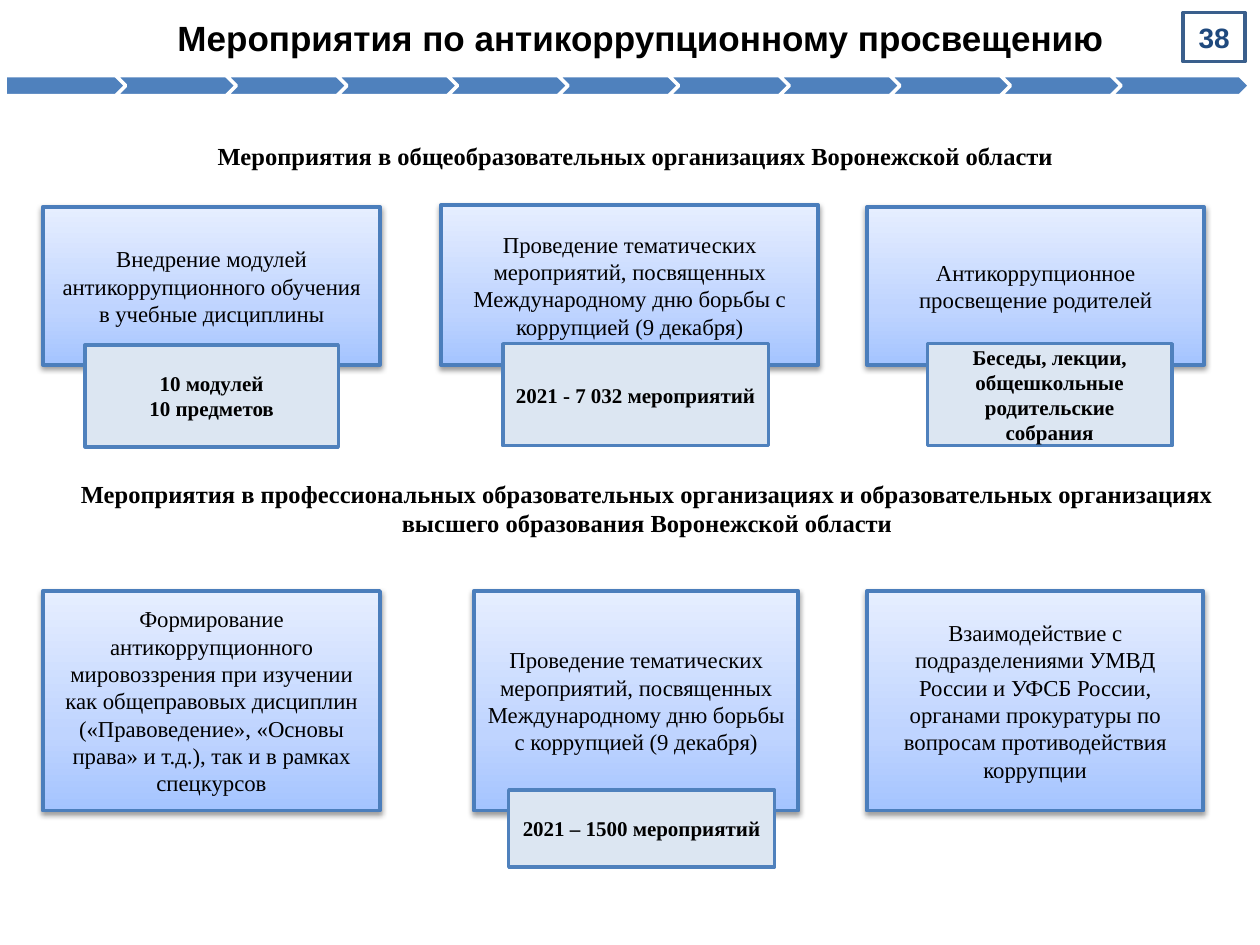
from lxml.etree import SubElement
from pptx import Presentation
from pptx.dml.color import RGBColor
from pptx.enum.shapes import MSO_SHAPE
from pptx.enum.text import MSO_ANCHOR, MSO_AUTO_SIZE, PP_ALIGN
from pptx.oxml.ns import qn
from pptx.util import Pt

BLACK = RGBColor(0x00, 0x00, 0x00)
WHITE = RGBColor(0xFF, 0xFF, 0xFF)
NAVY = RGBColor(0x1F, 0x49, 0x7D)
NUMBER_LINE = RGBColor(0x3A, 0x5F, 0x8C)
BLUE = RGBColor(0x4F, 0x81, 0xBD)
CARD_LINE = RGBColor(0x4B, 0x7E, 0xBC)
PALE_BLUE = RGBColor(0xDC, 0xE6, 0xF2)
CARD_STOPS = [
    (0, RGBColor(0xA4, 0xC4, 0xFF)),
    (35, RGBColor(0xBF, 0xD4, 0xFF)),
    (100, RGBColor(0xE6, 0xEE, 0xFF)),
]

SANS = "Arial"
SERIF = "Times New Roman"

THEMED_EVENTS = ("Проведение тематических мероприятий, посвященных "
                 "Международному дню борьбы с коррупцией (9 декабря)")

# Each entry: left, top, width, height in points, then the text
HEADINGS = [
    (17.3, 77, 692, 24.5,
     "Мероприятия в общеобразовательных организациях Воронежской области"),
    (23.8, 270, 692, 41,
     "Мероприятия в профессиональных образовательных организациях и "
     "образовательных организациях высшего образования Воронежской области"),
]
CARDS = [
    (24.5, 118.3, 192.6, 90.2,
     "Внедрение модулей антикоррупционного обучения в учебные дисциплины"),
    (252, 117.2, 215.5, 91.4, THEMED_EVENTS),
    (495.4, 118.3, 192.6, 90.2, "Антикоррупционное просвещение родителей"),
    (24.5, 337.8, 192.6, 125.4,
     "Формирование антикоррупционного мировоззрения при изучении как "
     "общеправовых дисциплин («Правоведение», «Основы права» и т.д.), "
     "так и в рамках спецкурсов"),
    (270.7, 337.8, 185.5, 125.4, THEMED_EVENTS),
    (495.4, 337.8, 192.2, 125.4,
     "Взаимодействие с подразделениями УМВД России и УФСБ России, органами "
     "прокуратуры по вопросам противодействия коррупции"),
]
BADGES = [
    (48.6, 197, 144.7, 58.3, "10 модулей\n10 предметов"),
    (287.3, 196.4, 151.9, 58.3, "2021 - 7 032 мероприятий"),
    (530, 196.4, 139.7, 58.3,
     "Беседы, лекции, общешкольные родительские собрания"),
    (290.7, 451.5, 151.9, 43.9, "2021 – 1500 мероприятий"),
]


def write_text(sp, text, font, size, color=BLACK, bold=False,
               anchor=MSO_ANCHOR.MIDDLE, wrap=True):
    """Fill a shape with centred text, one paragraph per line."""
    tf = sp.text_frame
    tf.word_wrap = wrap
    tf.auto_size = MSO_AUTO_SIZE.NONE
    tf.vertical_anchor = anchor
    for i, line in enumerate(text.split("\n")):
        p = tf.add_paragraph() if i else tf.paragraphs[0]
        p.alignment = PP_ALIGN.CENTER
        r = p.add_run()
        r.text = line
        r.font.name = font
        r.font.size = Pt(size)
        r.font.bold = bold
        r.font.color.rgb = color


def add_box(shapes, kind, x, y, w, h, fill, line, line_width):
    sp = shapes.add_shape(kind, Pt(x), Pt(y), Pt(w), Pt(h))
    sp.shadow.inherit = False
    if fill is None:
        sp.fill.background()
    else:
        sp.fill.solid()
        sp.fill.fore_color.rgb = fill
    sp.line.color.rgb = line
    sp.line.width = Pt(line_width)
    return sp


def apply_gradient(sp, stops):
    """Run the colour stops from the bottom of the shape to its top."""
    sp.fill.gradient()
    sp.fill.gradient_angle = 90
    gs_list = sp._element.spPr.find(qn("a:gradFill")).find(qn("a:gsLst"))
    for gs in list(gs_list):
        gs_list.remove(gs)
    for pos, color in stops:
        gs = SubElement(gs_list, qn("a:gs"), pos=str(pos * 1000))
        SubElement(gs, qn("a:srgbClr"), val=str(color))


def apply_soft_shadow(sp):
    effects = sp._element.spPr.find(qn("a:effectLst"))
    shadow = SubElement(effects, qn("a:outerShdw"), blurRad=str(Pt(3.1)),
                        dist=str(Pt(1.6)), dir="5400000", rotWithShape="0")
    color = SubElement(shadow, qn("a:srgbClr"), val=str(BLACK))
    SubElement(color, qn("a:alpha"), val="38000")


def add_title(slide, text):
    title = slide.shapes.title
    title.left, title.top = Pt(92.2), Pt(5.8)
    title.width, title.height = Pt(547.9), Pt(31.7)
    write_text(title, text, SANS, 20, bold=True, anchor=MSO_ANCHOR.TOP,
               wrap=False)


def add_page_number(slide, number):
    sp = add_box(slide.shapes, MSO_SHAPE.RECTANGLE, 676.1, 7.2, 35.3, 28.1,
                 None, NUMBER_LINE, 2)
    write_text(sp, number, SANS, 16, NAVY, bold=True)


def add_arrow_band(slide, count=11, left=2.9, pitch=63.2):
    band = slide.shapes.add_group_shape()
    for i in range(count):
        kind = MSO_SHAPE.CHEVRON if i else MSO_SHAPE.PENTAGON
        add_box(band.shapes, kind, left + i * pitch, 43.2, 79.2, 11.5,
                BLUE, WHITE, 2)


def add_heading(slide, x, y, w, h, text):
    tb = slide.shapes.add_textbox(Pt(x), Pt(y), Pt(w), Pt(h))
    write_text(tb, text, SERIF, 14, bold=True, anchor=MSO_ANCHOR.TOP)


def add_card(slide, x, y, w, h, text):
    sp = add_box(slide.shapes, MSO_SHAPE.RECTANGLE, x, y, w, h,
                 None, CARD_LINE, 2.25)
    apply_gradient(sp, CARD_STOPS)
    apply_soft_shadow(sp)
    write_text(sp, text, SERIF, 13)


def add_badge(slide, x, y, w, h, text):
    sp = add_box(slide.shapes, MSO_SHAPE.RECTANGLE, x, y, w, h,
                 PALE_BLUE, BLUE, 2)
    write_text(sp, text, SERIF, 12, bold=True)


def main():
    prs = Presentation()
    prs.slide_width, prs.slide_height = Pt(720), Pt(540)
    slide = prs.slides.add_slide(prs.slide_layouts[5])
    add_title(slide, "Мероприятия по антикоррупционному просвещению")
    add_page_number(slide, "38")
    add_arrow_band(slide)
    for heading in HEADINGS:
        add_heading(slide, *heading)
    for card in CARDS:
        add_card(slide, *card)
    for badge in BADGES:
        add_badge(slide, *badge)
    prs.save("out.pptx")


if __name__ == "__main__":
    main()
